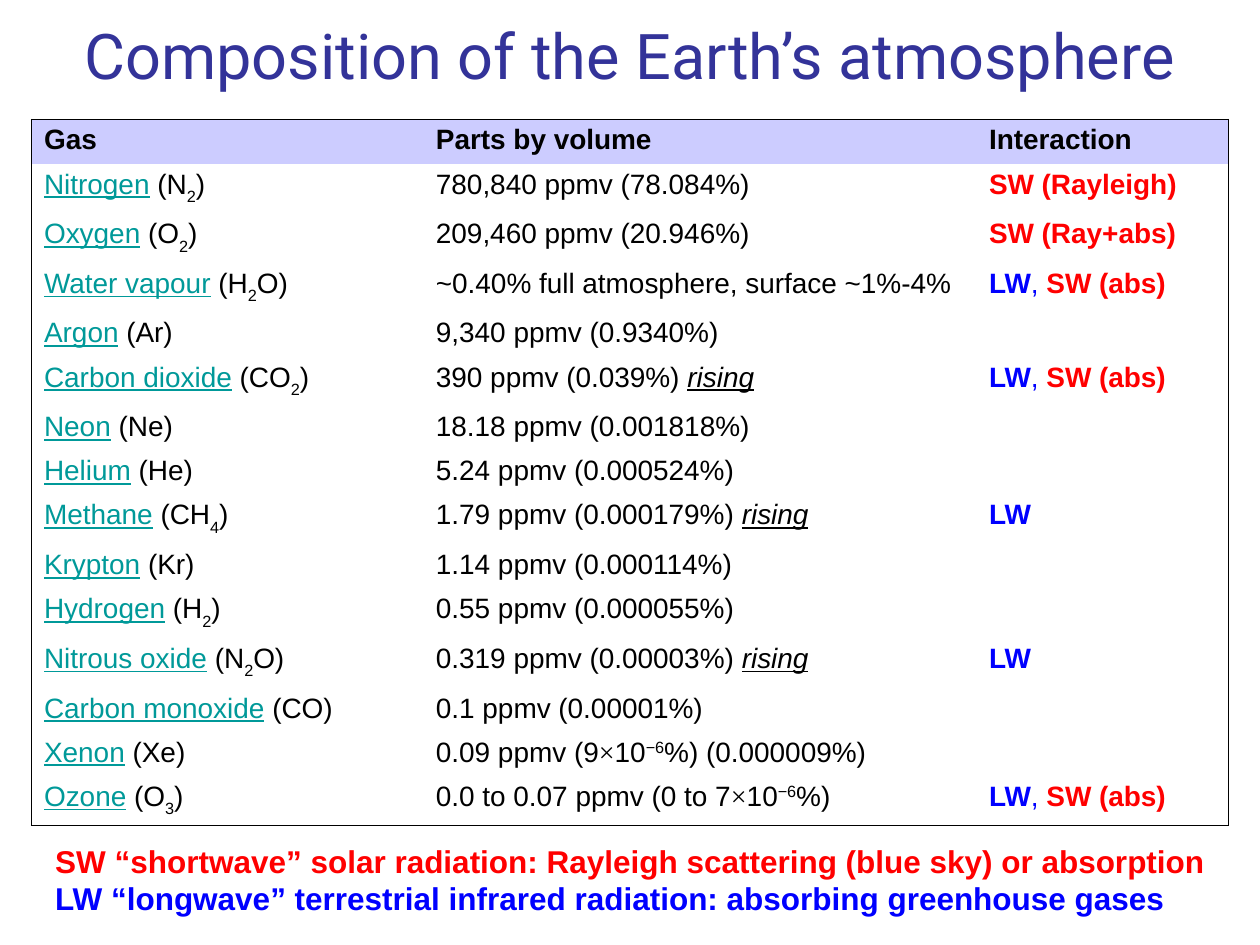
from lxml.etree import SubElement
from pptx import Presentation
from pptx.dml.color import RGBColor
from pptx.enum.text import MSO_ANCHOR, PP_ALIGN
from pptx.oxml.ns import qn
from pptx.util import Inches, Pt

BLACK = RGBColor(0x00, 0x00, 0x00)
INDIGO = RGBColor(0x33, 0x33, 0x99)
LAVENDER = RGBColor(0xCC, 0xCC, 0xFF)
TEAL = RGBColor(0x00, 0x99, 0x99)
RED = RGBColor(0xFF, 0x00, 0x00)
BLUE = RGBColor(0x00, 0x00, 0xFF)

SUBSCRIPT = dict(baseline=-30000)
SHORTWAVE = dict(color=RED, bold=True)
STYLES = {
    "2": SUBSCRIPT,
    "3": SUBSCRIPT,
    "4": SUBSCRIPT,
    "−6": dict(baseline=30000),
    "×": dict(font="Times New Roman"),
    "rising": dict(italic=True, underline=True),
    "LW": dict(color=BLUE, bold=True),
    ", ": dict(color=BLUE),
    "SW (abs)": SHORTWAVE,
    "SW (Rayleigh)": SHORTWAVE,
    "SW (Ray+abs)": SHORTWAVE,
}
HEADERS = ["Gas", "Parts by volume", "Interaction"]
GASES = [
    ("Nitrogen", " (N|2|)", "780,840 ppmv (78.084%)", "SW (Rayleigh)"),
    ("Oxygen", " (O|2|)", "209,460 ppmv (20.946%)", "SW (Ray+abs)"),
    ("Water vapour", " (H|2|O)", "~0.40% full atmosphere, surface ~1%-4%", "LW|, |SW (abs)"),
    ("Argon", " (Ar)", "9,340 ppmv (0.9340%)", ""),
    ("Carbon dioxide", " (CO|2|)", "390 ppmv (0.039%) |rising", "LW|, |SW (abs)"),
    ("Neon", " (Ne)", "18.18 ppmv (0.001818%)", ""),
    ("Helium", " (He)", "5.24 ppmv (0.000524%)", ""),
    ("Methane", " (CH|4|)", "1.79 ppmv (0.000179%) |rising", "LW"),
    ("Krypton", " (Kr)", "1.14 ppmv (0.000114%)", ""),
    ("Hydrogen", " (H|2|)", "0.55 ppmv (0.000055%)", ""),
    ("Nitrous oxide", " (N|2|O)", "0.319 ppmv (0.00003%) |rising", "LW"),
    ("Carbon monoxide", " (CO)", "0.1 ppmv (0.00001%)", ""),
    ("Xenon", " (Xe)", "0.09 ppmv (9|×|10|−6|%) (0.000009%)", ""),
    ("Ozone", " (O|3|)", "0.0 to 0.07 ppmv (0 to 7|×|10|−6|%)", "LW|, |SW (abs)"),
]


def write(p, text, size=16, font="Arial", color=BLACK, bold=False,
          italic=False, underline=False, baseline=0):
    r = p.add_run()
    r.text = text
    r.font.size = Pt(size)
    r.font.name = font
    r.font.color.rgb = color
    r.font.bold = bold
    r.font.italic = italic
    r.font.underline = underline
    if baseline:
        r.font._element.set("baseline", str(baseline))


def add_border(cell, sides):
    tc_pr = cell._tc.get_or_add_tcPr()
    for side in "LRTB":
        ln = SubElement(tc_pr, qn(f"a:ln{side}"), w=str(Pt(1)))
        if side in sides:
            fill = SubElement(ln, qn("a:solidFill"))
            SubElement(fill, qn("a:srgbClr"), val=str(BLACK))
        else:
            SubElement(ln, qn("a:noFill"))


prs = Presentation()
prs.slide_width, prs.slide_height = Inches(10), Inches(7.5)
COL, ROW = prs.slide_width / 10, prs.slide_height / 7.5
s = prs.slides.add_slide(prs.slide_layouts[6])

title = s.shapes.add_textbox(int(0.5 * COL), 0, int(9 * COL), int(0.87 * ROW))
tf = title.text_frame
tf.word_wrap = True
tf.vertical_anchor = MSO_ANCHOR.MIDDLE
tf.paragraphs[0].alignment = PP_ALIGN.CENTER
write(tf.paragraphs[0], "Composition of the Earth’s atmosphere",
      size=36, font="Roboto", color=INDIGO)

last_row, last_col = len(GASES), len(HEADERS) - 1
frame = s.shapes.add_table(last_row + 1, last_col + 1, int(0.25 * COL),
                           int(0.95 * ROW), int(9.5 * COL), int(5.5 * ROW))
table = frame.table
table.first_row = table.horz_banding = False
table._tbl.tblPr.find(qn("a:tableStyleId")).text = "{2D5ABB26-0587-4C30-8999-92F81FD0307C}"
for column, share in zip(table.columns, (3.11, 4.39, 2)):
    column.width = int(share * COL)

for i, row in enumerate(table.rows):
    has_subscript = i > 0 and "|" in GASES[i - 1][1]
    row.height = int((0.39 if has_subscript else 0.35) * ROW)
    for j, cell in enumerate(row.cells):
        cell.margin_top = cell.margin_bottom = int(0.04 * ROW)
        sides = "L" * (j == 0) + "R" * (j == last_col) + "T" * (i == 0) + "B" * (i == last_row)
        add_border(cell, sides)
        p = cell.text_frame.paragraphs[0]
        p_pr = p._p.get_or_add_pPr()
        p_pr.set("marL", str(int(0.38 * COL)))
        p_pr.set("indent", str(int(-0.38 * COL)))
        if i == 0:
            cell.fill.solid()
            cell.fill.fore_color.rgb = LAVENDER
            write(p, HEADERS[j], bold=True)
            continue
        cell.fill.background()
        name, *texts = GASES[i - 1]
        if j == 0:
            write(p, name, color=TEAL, underline=True)
        if texts[j]:
            for part in texts[j].split("|"):
                write(p, part, **STYLES.get(part, {}))
        else:
            SubElement(p._p, qn("a:endParaRPr"), sz="1600")

legend = s.shapes.add_textbox(int(0.34 * COL), int(6.63 * ROW), int(9.33 * COL), int(0.7 * ROW))
tf = legend.text_frame
tf.word_wrap = False
write(tf.paragraphs[0], "SW “shortwave” solar radiation: Rayleigh scattering (blue sky) or absorption",
      size=18, color=RED, bold=True)
write(tf.add_paragraph(), "LW “longwave” terrestrial infrared radiation: absorbing greenhouse gases",
      size=18, color=BLUE, bold=True)

prs.save("out.pptx")
